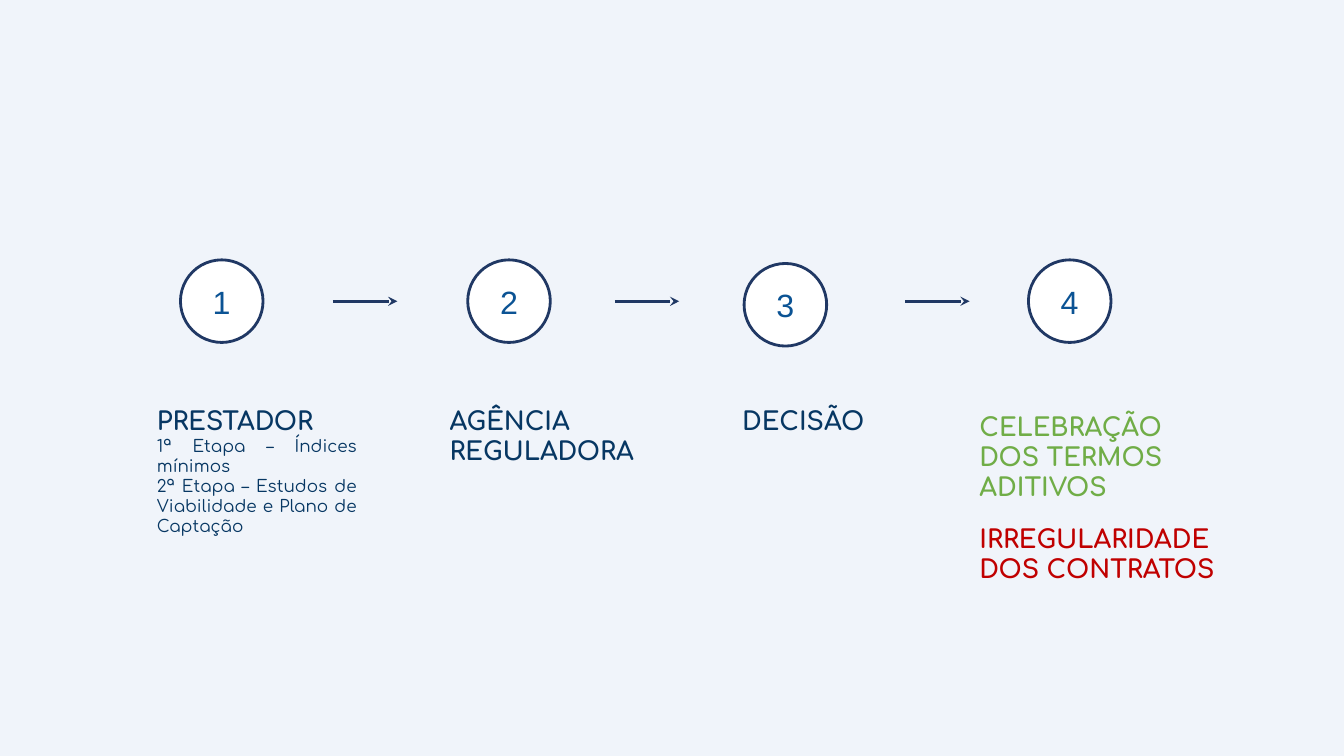
from dataclasses import dataclass
from lxml.etree import SubElement
from pptx import Presentation
from pptx.dml.color import RGBColor
from pptx.enum.shapes import MSO_CONNECTOR, MSO_SHAPE
from pptx.enum.text import MSO_ANCHOR, MSO_AUTO_SIZE, PP_ALIGN
from pptx.oxml.ns import qn
from pptx.util import Pt


@dataclass(frozen=True)
class Theme:
    back: str = "F0F4FA"
    white: str = "FFFFFF"
    edge: str = "203864"
    digit: str = "0B5394"
    navy: str = "073763"
    green: str = "70AD47"
    red: str = "C00000"
    font: str = "Comfortaa"
    plain: str = "Arial"
    num: int = 23
    head: int = 18
    note: int = 12
    pad: float = 7.2


def color(code):
    return RGBColor.from_string(code)


def write(para, text, size, ink, font, bold=False, align=PP_ALIGN.LEFT):
    para.alignment = align
    run = para.add_run()
    run.text = text
    run.font.name = font
    run.font.size = Pt(size)
    run.font.bold = bold
    run.font.color.rgb = color(ink)


class Board:
    def __init__(self, slide, theme):
        self.slide = slide
        self.theme = theme
        fill = slide.background.fill
        fill.solid()
        fill.fore_color.rgb = color(theme.back)

    def frame(self, shape):
        frame = shape.text_frame
        frame.word_wrap = True
        pad = Pt(self.theme.pad)
        frame.margin_left = frame.margin_right = pad
        frame.margin_top = frame.margin_bottom = pad
        return frame

    def badge(self, num, left, top, size=59):
        look = self.theme
        disc = self.slide.shapes.add_shape(
            MSO_SHAPE.OVAL, Pt(left), Pt(top), Pt(size), Pt(size))
        disc.shadow.inherit = False
        disc.fill.solid()
        disc.fill.fore_color.rgb = color(look.white)
        disc.line.color.rgb = color(look.edge)
        disc.line.width = Pt(2)
        frame = self.frame(disc)
        frame.vertical_anchor = MSO_ANCHOR.MIDDLE
        write(frame.paragraphs[0], str(num), look.num, look.digit, look.plain,
              align=PP_ALIGN.CENTER)

    def arrow(self, left, y, span=46):
        link = self.slide.shapes.add_connector(
            MSO_CONNECTOR.STRAIGHT, Pt(left), Pt(y), Pt(left + span), Pt(y))
        link.line.color.rgb = color(self.theme.edge)
        link.line.width = Pt(2.25)
        SubElement(link.line._get_or_add_ln(), qn("a:tailEnd"), type="stealth")
        SubElement(link._element.spPr, qn("a:effectLst"))

    def label(self, head, left, top, width, height, ink, notes=()):
        look = self.theme
        box = self.slide.shapes.add_textbox(
            Pt(left), Pt(top), Pt(width), Pt(height))
        frame = self.frame(box)
        frame.auto_size = MSO_AUTO_SIZE.SHAPE_TO_FIT_TEXT
        write(frame.paragraphs[0], head, look.head, ink, look.font, bold=True)
        for note in notes:
            write(frame.add_paragraph(), note, look.note, ink, look.font,
                  align=PP_ALIGN.JUSTIFY)


def main():
    deck = Presentation()
    deck.slide_width, deck.slide_height = Pt(960), Pt(540)
    look = Theme()
    board = Board(deck.slides.add_slide(deck.slide_layouts[6]), look)

    # Numbered steps
    spots = [(128.9, 185.6), (334.1, 185.6), (531.5, 188.2), (734.6, 185.6)]
    for num, (left, top) in enumerate(spots, 1):
        board.badge(num, left, top)

    # Arrows between steps
    for left in (237.8, 439.2, 646.6):
        board.arrow(left, 215.2)

    # Step labels
    notes = ("1ª Etapa – Índices mínimos",
             "2ª Etapa – Estudos de Viabilidade e Plano de Captação")
    board.label("PRESTADOR", 105, 282.2, 157, 108.7, look.navy, notes)
    board.label("AGÊNCIA REGULADORA", 314, 282.2, 157, 58.3, look.navy)
    board.label("DECISÃO", 523, 282.2, 157, 36, look.navy)

    # Possible outcomes
    board.label("CELEBRAÇÃO DOS TERMOS ADITIVOS",
                692.6, 286.6, 188, 80, look.green)
    board.label("IRREGULARIDADE DOS CONTRATOS",
                692.6, 366.5, 188, 58.3, look.red)

    deck.save("out.pptx")


if __name__ == "__main__":
    main()
